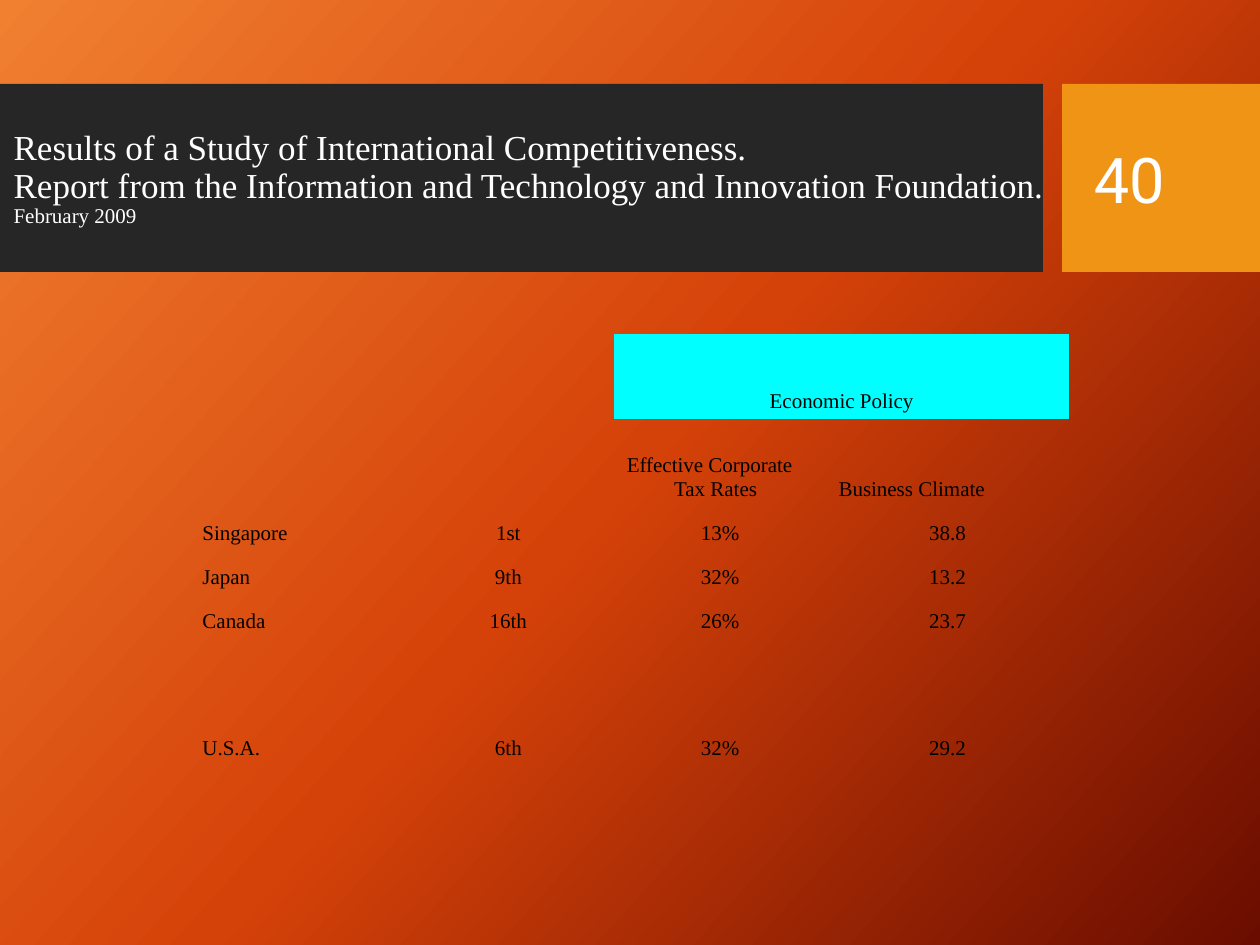
import copy
import dataclasses

import pptx
import pptx.dml.color
import pptx.enum.shapes
import pptx.enum.text
import pptx.util

Pt = pptx.util.Pt
Color = pptx.dml.color.RGBColor.from_string
Anchor = pptx.enum.text.MSO_ANCHOR
Align = pptx.enum.text.PP_ALIGN


@dataclasses.dataclass(frozen=True)
class Theme:
    gradient: tuple = ("F18031", "D54209", "6A0D00")
    band: str = "262626"
    accent: str = "F09415"
    highlight: str = "00FFFF"
    light: str = "FFFFFF"
    dark: str = "000000"
    serif: str = "Times New Roman"
    sans: str = "Roboto"
    title_size: int = 20
    small_size: int = 12
    number_size: int = 36


theme = Theme()


def set_font(font, name, size, color):
    font.name = name
    font.size = Pt(size)
    font.color.rgb = Color(color)


def add_text_box(left, top, width, height):
    box = page.shapes.add_textbox(Pt(left), Pt(top), Pt(width), Pt(height))
    box.text_frame.word_wrap = True
    box.text_frame.vertical_anchor = Anchor.MIDDLE
    return box.text_frame.paragraphs[0]


deck = pptx.Presentation()
deck.slide_width, deck.slide_height = Pt(720), Pt(540)
page = deck.slides.add_slide(deck.slide_layouts[6])

background = page.background.fill
background.gradient()
background.gradient_angle = 318
stop_list = background._fill._gradFill.gsLst
stop_list.insert(1, copy.deepcopy(stop_list[0]))
for stop, position, color in zip(background.gradient_stops, (0, 0.5, 1), theme.gradient):
    stop.position = position
    stop.color.rgb = Color(color)

for left, width, color in ((0, 596, theme.band), (607, 113, theme.accent)):
    band = page.shapes.add_shape(
        pptx.enum.shapes.MSO_SHAPE.RECTANGLE, Pt(left), Pt(48), Pt(width), Pt(107.5))
    band.shadow.inherit = False
    band.fill.solid()
    band.fill.fore_color.rgb = Color(color)
    band.line.fill.background()

title = add_text_box(0.7, 57.5, 629.3, 90)
title.line_spacing = 0.9
heading = ("Results of a Study of International Competitiveness.\v"
           "Report from the Information and Technology and Innovation Foundation. ")
title.text = heading
set_font(title.font, theme.serif, theme.title_size, theme.light)
date = title.add_run()
date.text = "February 2009"
date.font.size = Pt(theme.small_size)

columns = (121.5, 121, 121, 139)
rows = (48.75, 50.25, 25.2, 25.2, 25.2, 47.5, 25.2)
content = (
    ("", "", "Economic Policy", ""),
    ("", "", "Effective Corporate Tax Rates", "Business Climate"),
    ("Singapore", "1st", "13%", "38.8"),
    ("Japan", "9th", "32%", "13.2"),
    ("Canada", "16th", "26%", "23.7"),
    ("", "", "", ""),
    ("U.S.A.", "6th", "32%", "29.2"),
)
frame = page.shapes.add_table(
    len(rows), len(columns), Pt(108.5), Pt(190.8), Pt(sum(columns)), Pt(sum(rows)))
table = frame.table
table.first_row = table.horz_banding = False
table._tbl.tblPr[0].text = "{2D5ABB26-0587-4C30-8999-92F81FD0307C}"
for column, width in zip(table.columns, columns):
    column.width = Pt(width)
for row, height in zip(table.rows, rows):
    row.height = Pt(height)
table.cell(0, 2).merge(table.cell(0, 3))

for row_index, values in enumerate(content):
    for column_index, value in enumerate(values):
        cell = table.cell(row_index, column_index)
        cell.fill.background()
        cell.vertical_anchor = Anchor.BOTTOM
        para = cell.text_frame.paragraphs[0]
        if value:
            para.text = value
            centred = column_index > 0 and row_index != 1
            para.alignment = Align.CENTER if centred else Align.LEFT
            properties = para._p.get_or_add_pPr()
            properties.set("marL", str(Pt(27)))
            properties.set("indent", str(Pt(-27)))
        set_font(para.font, theme.serif, theme.small_size, theme.dark)

policy = table.cell(0, 2)
policy.fill.solid()
policy.fill.fore_color.rgb = Color(theme.highlight)

number = add_text_box(618, 59, 91.5, 85.7)
number.text = "40"
set_font(number.font, theme.sans, theme.number_size, theme.light)

deck.save("out.pptx")
